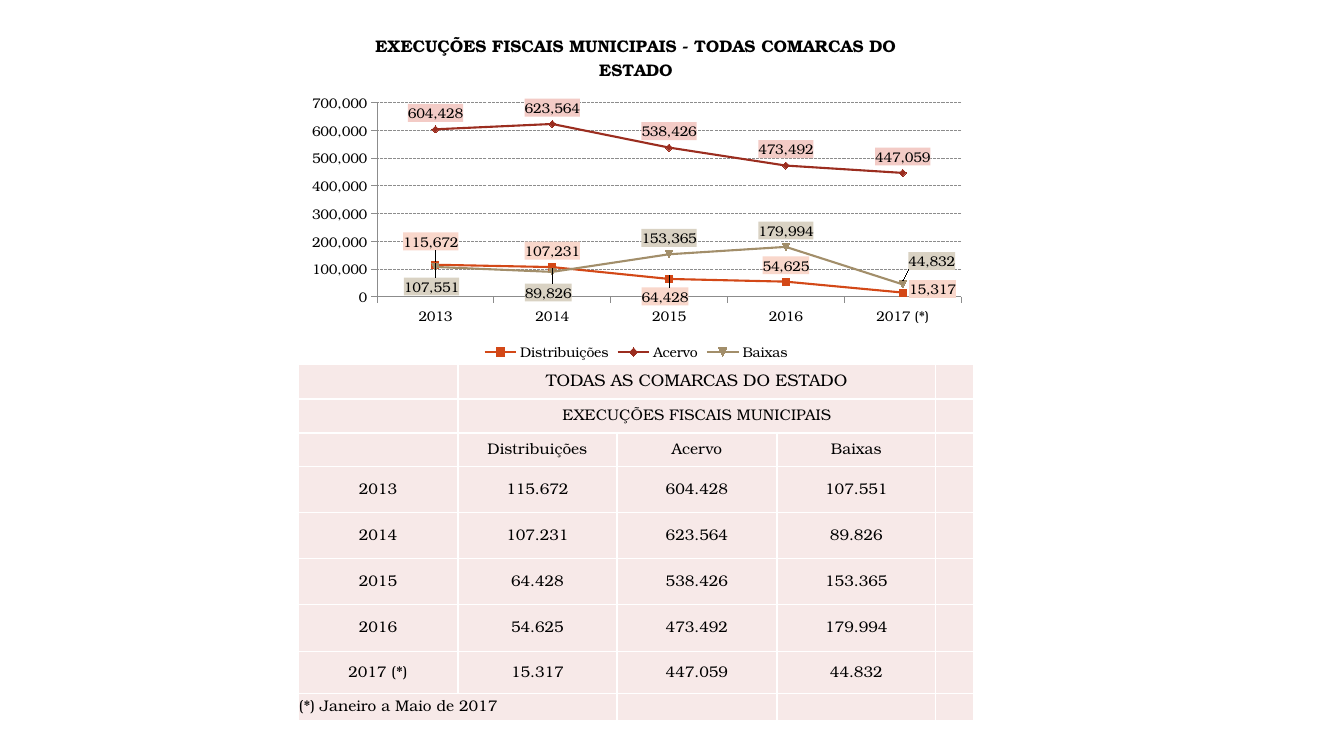
import pptx
import pptx.chart.data
import pptx.dml.color
import pptx.enum.chart
import pptx.enum.dml
import pptx.enum.text
import pptx.oxml
import pptx.oxml.ns
import pptx.util

YEARS = ["2013", "2014", "2015", "2016", "2017 (*)"]
SERIES = [
    ("Distribuições", [115672, 107231, 64428, 54625, 15317], "D34817", "F9D7CB",
     {0: (-5, -7), 2: (-4, 34), 4: (30, 13)}),
    ("Acervo", [604428, 623564, 538426, 473492, 447059], "9B2D1F", "F3CBC6", {}),
    ("Baixas", [107551, 89826, 153365, 179994, 44832], "A28E6A", "D9D2C3",
     {0: (-4, 36), 1: (-4, 37), 4: (29, -7)}),
]
NUMBER = "#,##0"


def px(n):
    return pptx.util.Emu(round(n * 914400 / 100.8))


def color(value):
    return pptx.dml.color.RGBColor.from_string(value)


def xml(tag, attrs="", inner=""):
    names = pptx.oxml.ns.nsdecls("a", "c")
    return pptx.oxml.parse_xml(f"<{tag} {names} {attrs}>{inner}</{tag}>")


def solid(value):
    return f'<a:solidFill><a:srgbClr val="{value}"/></a:solidFill>'


class Deck:
    font = "TeX Gyre Bonum"
    ink = "000000"
    gray = "8C8C8C"
    cell_fill = "F7E9E8"
    border = "FFFFFF"

    def __init__(self, width, height):
        self.prs = pptx.Presentation()
        self.prs.slide_width, self.prs.slide_height = px(width), px(height)
        self.s = self.prs.slides.add_slide(self.prs.slide_layouts[6])

    def style(self, font, size, bold=False):
        font.name = self.font
        font.size = pptx.util.Pt(size)
        font.bold = bold
        font.color.rgb = color(self.ink)

    def line(self, fmt, value, width):
        fmt.line.color.rgb = color(value)
        fmt.line.width = pptx.util.Pt(width)

    def layout(self, x, y, extra="", mode=""):
        return xml("c:layout", inner=f'<c:manualLayout>{mode}<c:x val="{x:.3f}"/>'
                                     f'<c:y val="{y:.3f}"/>{extra}</c:manualLayout>')

    def line_chart(self, box, plot_box, title, categories, series):
        left, top, width, height = box
        data = pptx.chart.data.CategoryChartData(number_format=NUMBER)
        data.categories = categories
        for name, values, *_ in series:
            data.add_series(name, values)
        chart = self.s.shapes.add_chart(
            pptx.enum.chart.XL_CHART_TYPE.LINE_MARKERS, *map(px, box), data).chart
        self.style(chart.font, 10)

        chart.has_title = True
        p = chart.chart_title.text_frame.paragraphs[0]
        r = p.add_run()
        r.text = title
        self.style(r.font, 12, True)
        chart.chart_title.include_in_layout = False

        chart.has_legend = True
        chart.legend.position = pptx.enum.chart.XL_LEGEND_POSITION.BOTTOM
        chart.legend.include_in_layout = False
        self.axes(chart)

        area = chart.plots[0]._element.getparent()
        for old in area.findall(pptx.oxml.ns.qn("c:layout")):
            area.remove(old)
        x, y, w, h = plot_box
        mode = ('<c:layoutTarget val="inner"/><c:xMode val="edge"/>'
                '<c:yMode val="edge"/>')
        extent = f'<c:w val="{w / width:.3f}"/><c:h val="{h / height:.3f}"/>'
        area.insert(0, self.layout((x - left) / width, (y - top) / height, extent, mode))

        for ser, (_, _, value, label_fill, nudges) in zip(chart.plots[0].series, series):
            ser.smooth = False
            self.line(ser.format, value, 1.5)
            self.labels(ser, label_fill, nudges, width, height)

    def axes(self, chart):
        for axis in (chart.category_axis, chart.value_axis):
            axis.major_tick_mark = pptx.enum.chart.XL_TICK_MARK.OUTSIDE
            axis.minor_tick_mark = pptx.enum.chart.XL_TICK_MARK.NONE
            self.line(axis.format, self.gray, 0.75)
        axis = chart.value_axis
        axis.minimum_scale, axis.maximum_scale, axis.major_unit = 0, 700000, 100000
        axis.tick_labels.number_format = NUMBER
        axis.tick_labels.number_format_is_linked = False
        axis.has_major_gridlines = True
        self.line(axis.major_gridlines.format, self.gray, 0.75)
        axis.major_gridlines.format.line.dash_style = pptx.enum.dml.MSO_LINE.SQUARE_DOT

    def labels(self, ser, fill, nudges, width, height):
        above = pptx.enum.chart.XL_LABEL_POSITION.ABOVE
        labels = ser.data_labels
        labels.show_value = True
        labels.number_format = NUMBER
        labels.number_format_is_linked = False
        labels.position = above
        self.style(labels.font, 10)
        number = labels._element.find(pptx.oxml.ns.qn("c:numFmt"))
        number.addnext(xml("c:spPr", inner=solid(fill)))
        for index, (dx, dy) in nudges.items():
            label = ser.points[index].data_label
            label.position = above
            self.style(label.font, 10)
            element = next(e for e in labels._element.findall(pptx.oxml.ns.qn("c:dLbl"))
                           if e.find(pptx.oxml.ns.qn("c:idx")).get("val") == str(index))
            for old in element.findall(pptx.oxml.ns.qn("c:spPr")):
                element.remove(old)
            parts = [self.layout(dx / width, dy / height),
                     xml("c:numFmt", f'formatCode="{NUMBER}" sourceLinked="0"'),
                     xml("c:spPr", inner=solid(fill))]
            for position, part in enumerate(parts, 1):
                element.insert(position, part)

    def table(self, left, top, columns, heights, rows, spans):
        frame = self.s.shapes.add_table(len(rows), len(columns), px(left), px(top),
                                        px(sum(columns)), px(sum(heights)))
        table = frame.table
        table.first_row = table.horz_banding = False
        for column, width in zip(table.columns, columns):
            column.width = px(width)
        for row, height in zip(table.rows, heights):
            row.height = px(height)
        for i, texts in enumerate(rows):
            for j, text in enumerate(texts):
                self.cell(table.cell(i, j), text, 12 if i == 0 else 11,
                          i == len(rows) - 1)
        for i, first, last in spans:
            table.cell(i, first).merge(table.cell(i, last))

    def cell(self, cell, text, size, note):
        anchor, align = pptx.enum.text.MSO_ANCHOR, pptx.enum.text.PP_ALIGN
        cell.margin_left = cell.margin_right = cell.margin_top = px(1)
        cell.margin_bottom = px(5)
        cell.vertical_anchor = anchor.BOTTOM if note else anchor.MIDDLE
        cell.fill.solid()
        cell.fill.fore_color.rgb = color(self.cell_fill)
        for position, side in enumerate("LRTB"):
            edge = xml(f"a:ln{side}", 'w="12700"', solid(self.border))
            cell._tc.get_or_add_tcPr().insert(position, edge)
        p = cell.text_frame.paragraphs[0]
        p.alignment = align.LEFT if note else align.CENTER
        if text:
            r = p.add_run()
            r.text = text
            self.style(r.font, size)
        else:
            p._p.append(xml("a:endParaRPr", f'sz="{size * 100}"'))


def main():
    deck = Deck(1344, 756)
    deck.line_chart((298, 16, 676, 349), (377, 103, 584, 194),
                    "EXECUÇÕES FISCAIS MUNICIPAIS - TODAS COMARCAS DO ESTADO",
                    YEARS, SERIES)
    rows = [
        ["", "TODAS AS COMARCAS DO ESTADO", "", "", ""],
        ["", "EXECUÇÕES FISCAIS MUNICIPAIS", "", "", ""],
        ["", *(name for name, *_ in SERIES), ""],
    ]
    for i, year in enumerate(YEARS):
        values = [f"{values[i]:,}".replace(",", ".") for _, values, *_ in SERIES]
        rows.append([year, *values, ""])
    rows.append(["(*) Janeiro a Maio de 2017", "", "", "", ""])
    deck.table(298, 364, [160, 159, 160, 159, 38],
               [35, 34, 34, 46, 46, 46, 47, 42, 26], rows,
               [(0, 1, 3), (1, 1, 3), (8, 0, 1)])
    deck.prs.save("out.pptx")


if __name__ == "__main__":
    main()
